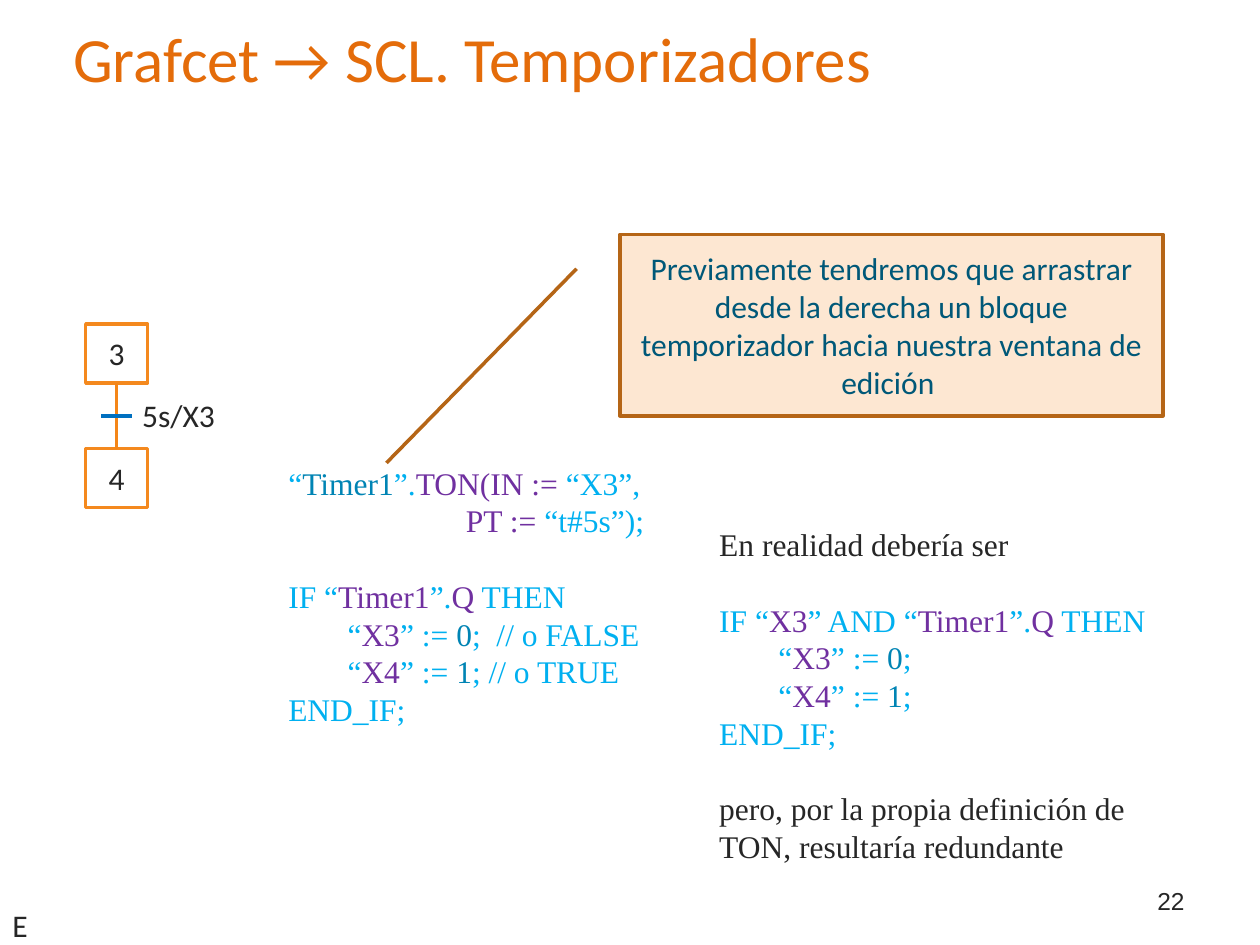
from typing import NamedTuple

from lxml.etree import SubElement
from pptx import Presentation
from pptx.dml.color import RGBColor
from pptx.enum.shapes import MSO_CONNECTOR, MSO_SHAPE
from pptx.enum.text import MSO_ANCHOR, MSO_AUTO_SIZE, PP_ALIGN
from pptx.oxml.ns import qn
from pptx.util import Inches, Pt

WHITE = RGBColor(0xFF, 0xFF, 0xFF)
INK = RGBColor(0x26, 0x26, 0x26)
TITLE_ORANGE = RGBColor(0xE4, 0x6C, 0x0A)
STEP_ORANGE = RGBColor(0xF4, 0x89, 0x1E)
LINK_ORANGE = RGBColor(0xF4, 0x86, 0x18)
TRANSITION_BLUE = RGBColor(0x00, 0x70, 0xC0)
NOTE_FILL = RGBColor(0xFD, 0xE7, 0xD2)
NOTE_LINE = RGBColor(0xB5, 0x65, 0x16)
NOTE_TEXT = RGBColor(0x00, 0x58, 0x78)
SKY = RGBColor(0x00, 0xB0, 0xF0)
TEAL = RGBColor(0x00, 0x84, 0xB4)
PURPLE = RGBColor(0x70, 0x30, 0xA0)

SLIDE_COLS, SLIDE_ROWS = 100, 75
CELL = Inches(10) / SLIDE_COLS
TAB = Inches(0.47)
CODE_LINE = Pt(21.5)


class Box(NamedTuple):
    """A region in grid columns and rows."""
    col: float
    row: float
    cols: float
    rows: float

    def inner(self, col, row, cols=0, rows=0):
        return Box(self.col + col, self.row + row, cols, rows)

    def emu(self):
        return [round(length * CELL) for length in self]


def style(paragraph, color, size=18, font="Calibri", align=PP_ALIGN.LEFT):
    paragraph.alignment = align
    paragraph.font.name = font
    paragraph.font.size = Pt(size)
    paragraph.font.color.rgb = color


def add_label(shapes, box, text, color=INK, wrap=False, **look):
    frame = shapes.add_textbox(*box.emu()).text_frame
    frame.word_wrap = wrap
    if not wrap:
        frame.auto_size = MSO_AUTO_SIZE.SHAPE_TO_FIT_TEXT
    frame.text = text
    style(frame.paragraphs[0], color, **look)
    return frame


def add_panel(shapes, preset, box, text, fill, line, color):
    panel = shapes.add_shape(preset, *box.emu())
    panel.shadow.inherit = False
    panel.fill.solid()
    panel.fill.fore_color.rgb = fill
    panel.line.color.rgb = line
    panel.line.width = Pt(2)
    frame = panel.text_frame
    frame.word_wrap = True
    frame.vertical_anchor = MSO_ANCHOR.MIDDLE
    frame.text = text
    style(frame.paragraphs[0], color, align=PP_ALIGN.CENTER)
    return panel


def add_line(shapes, start, end, color):
    x1, y1 = start.emu()[:2]
    x2, y2 = end.emu()[:2]
    line = shapes.add_connector(MSO_CONNECTOR.STRAIGHT, x1, y1, x2, y2)
    line.line.color.rgb = color
    line.line.width = Pt(2.25)
    SubElement(line._element.spPr, qn("a:effectLst"))
    return line


def add_title(slide, box):
    title = slide.shapes.title
    title.left, title.top, title.width, title.height = box.emu()
    frame = title.text_frame
    frame.auto_size = MSO_AUTO_SIZE.NONE
    frame.vertical_anchor = MSO_ANCHOR.MIDDLE
    frame.text = "Grafcet → SCL. Temporizadores"
    style(frame.paragraphs[0], TITLE_ORANGE, size=36)


def add_grafcet(slide, box):
    """Two steps joined by a timed transition."""
    shapes = slide.shapes.add_group_shape().shapes
    step_cols, step_rows = 4.9, 4.7
    last_row = box.rows - step_rows
    middle_col, middle_row = step_cols / 2, box.rows / 2
    before, after = [
        add_panel(shapes, MSO_SHAPE.RECTANGLE,
                  box.inner(0, row, step_cols, step_rows),
                  number, WHITE, STEP_ORANGE, INK)
        for number, row in (("3", 0), ("4", last_row))]
    link = add_line(shapes, box.inner(middle_col, step_rows),
                    box.inner(middle_col, last_row), LINK_ORANGE)
    link.begin_connect(before, 2)
    link.end_connect(after, 0)
    add_line(shapes, box.inner(middle_col - 1.2, middle_row),
             box.inner(middle_col + 1.2, middle_row), TRANSITION_BLUE)
    add_label(shapes, box.inner(3.5, 5.2, 7.9, 4), "5s/X3")


def add_code(slide, box, blocks):
    """Blocks of lines, set one line apart; each line is a list of (text, color)."""
    frame = slide.shapes.add_textbox(*box.emu()).text_frame
    frame.word_wrap = False
    frame.auto_size = MSO_AUTO_SIZE.SHAPE_TO_FIT_TEXT
    lines = [(line, number > 0 and line is block[0])
             for number, block in enumerate(blocks) for line in block]
    for index, (line, opens_block) in enumerate(lines):
        paragraph = frame.paragraphs[0] if index == 0 else frame.add_paragraph()
        if opens_block:
            paragraph.space_before = CODE_LINE
        if line[0][0].startswith("\t"):
            stops = SubElement(paragraph._p.get_or_add_pPr(), qn("a:tabLst"))
            for stop in (1, 2, 3):
                SubElement(stops, qn("a:tab"), pos=str(TAB * stop), algn="l")
        style(paragraph, line[0][1], font="Times New Roman")
        for text, color in line:
            run = paragraph.add_run()
            run.text = text
            run.font.color.rgb = color


def assignment(step, value, ending=";"):
    return [("\t“", SKY), (step, PURPLE), ("” := ", SKY), (value, TEAL), (ending, SKY)]


def add_note(slide, box):
    note = add_panel(
        slide.shapes, MSO_SHAPE.LINE_CALLOUT_1, box,
        "Previamente tendremos que arrastrar desde la derecha un bloque "
        "temporizador hacia nuestra ventana de edición ",
        NOTE_FILL, NOTE_LINE, NOTE_TEXT)
    for index, share in enumerate((0.19, -0.08, 1.26, -0.43)):
        note.adjustments[index] = share


def add_footer(slide, box):
    number = add_label(slide.shapes, box.inner(71.7, 0, 23.3, 4), "22", wrap=True,
                       size=14, font="Arial", align=PP_ALIGN.RIGHT)
    number.vertical_anchor = MSO_ANCHOR.MIDDLE
    mark = add_label(slide.shapes, box.inner(0, 2.1, 3.2, 3.8), "E")
    mark.paragraphs[0].line_spacing = Pt(20)


def main():
    deck = Presentation()
    deck.slide_width = round(SLIDE_COLS * CELL)
    deck.slide_height = round(SLIDE_ROWS * CELL)
    slide = deck.slides.add_slide(deck.slide_layouts[5])

    timer_q = [("Timer1", PURPLE), ("”.", SKY), ("Q", PURPLE), (" THEN", SKY)]
    end_if = [("END_IF;", SKY)]
    timer_code = [
        [[("“", SKY), ("Timer1", TEAL), ("”.", SKY), ("TON(IN := ", PURPLE), ("“X3”,", SKY)],
         [("\t\t\t", SKY), ("PT := ", PURPLE), ("“t#5s”);", SKY)]],
        [[("IF “", SKY), *timer_q],
         assignment("X3", "0", ";  // o FALSE"),
         assignment("X4", "1", "; // o TRUE"),
         end_if]]
    strict_code = [
        [[("En realidad debería ser", INK)]],
        [[("IF “", SKY), ("X3", PURPLE), ("” AND “", SKY), *timer_q],
         assignment("X3", "0"),
         assignment("X4", "1"),
         end_if],
        [[("pero, por la propia definición de", INK)],
         [("TON, resultaría redundante", INK)]]]

    add_title(slide, Box(4.8, 0.8, 91.9, 7.5))
    add_grafcet(slide, Box(6.8, 25.7, 11.4, 14.6))
    add_code(slide, Box(21.9, 36.3, 30.6, 25.2), timer_code)
    add_code(slide, Box(56.1, 41.2, 36.2, 28.3), strict_code)
    add_note(slide, Box(49.2, 18.6, 43.1, 14.4))
    add_footer(slide, Box(0, 69.5, SLIDE_COLS, 5.5))
    deck.save("out.pptx")


if __name__ == "__main__":
    main()
